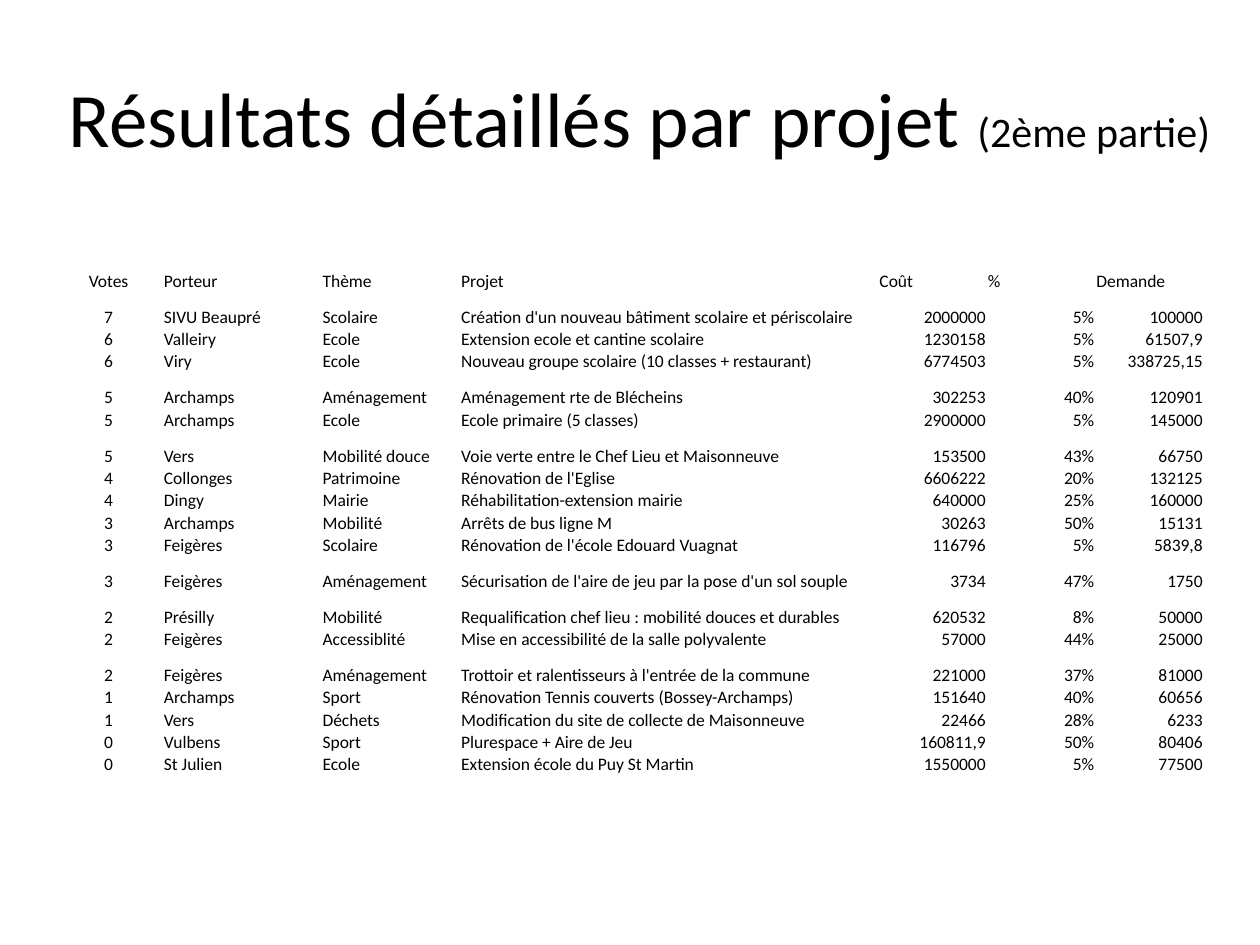
from typing import NamedTuple

from pptx import Presentation
from pptx.dml.color import RGBColor
from pptx.enum.text import MSO_ANCHOR, PP_ALIGN
from pptx.util import Pt

LEFT, MID, RIGHT = PP_ALIGN.LEFT, PP_ALIGN.CENTER, PP_ALIGN.RIGHT
CENTER, BOTTOM = MSO_ANCHOR.MIDDLE, MSO_ANCHOR.BOTTOM
BLACK = RGBColor(0, 0, 0)
FACE = "Calibri"
SHORT, TALL = 12.7, 20.6
INSET = 0.7


class Column(NamedTuple):
    head: str
    width: float
    align: PP_ALIGN


class Project(NamedTuple):
    votes: str
    owner: str
    theme: str
    name: str
    cost: str
    share: str
    asked: str
    high: float = SHORT


COLUMNS = [
    Column("Votes", 62, MID),
    Column("Porteur", 90.7, LEFT),
    Column("Thème", 79.2, LEFT),
    Column("Projet", 239, LEFT),
    Column("Coût", 62, RIGHT),
    Column("%", 62, RIGHT),
    Column("Demande", 62, RIGHT),
]

PROJECTS = [
    Project("7", "SIVU Beaupré", "Scolaire",
            "Création d'un nouveau bâtiment scolaire et périscolaire",
            "2000000", "5%", "100000", TALL),
    Project("6", "Valleiry", "Ecole", "Extension ecole et cantine scolaire",
            "1230158", "5%", "61507,9"),
    Project("6", "Viry", "Ecole", "Nouveau groupe scolaire (10 classes + restaurant)",
            "6774503", "5%", "338725,15"),
    Project("5", "Archamps", "Aménagement", "Aménagement rte de Blécheins",
            "302253", "40%", "120901", TALL),
    Project("5", "Archamps", "Ecole", "Ecole primaire (5 classes)",
            "2900000", "5%", "145000"),
    Project("5", "Vers", "Mobilité douce",
            "Voie verte entre le Chef Lieu et Maisonneuve",
            "153500", "43%", "66750", TALL),
    Project("4", "Collonges", "Patrimoine", "Rénovation de l'Eglise",
            "6606222", "20%", "132125"),
    Project("4", "Dingy", "Mairie", "Réhabilitation-extension mairie",
            "640000", "25%", "160000"),
    Project("3", "Archamps", "Mobilité", "Arrêts de bus ligne M",
            "30263", "50%", "15131"),
    Project("3", "Feigères", "Scolaire", "Rénovation de l'école Edouard Vuagnat",
            "116796", "5%", "5839,8"),
    Project("3", "Feigères", "Aménagement",
            "Sécurisation de l'aire de jeu par la pose d'un sol souple",
            "3734", "47%", "1750", TALL),
    Project("2", "Présilly", "Mobilité",
            "Requalification chef lieu : mobilité douces et durables",
            "620532", "8%", "50000", TALL),
    Project("2", "Feigères", "Accessiblité",
            "Mise en accessibilité de la salle polyvalente",
            "57000", "44%", "25000"),
    Project("2", "Feigères", "Aménagement",
            "Trottoir et ralentisseurs à l'entrée de la commune",
            "221000", "37%", "81000", TALL),
    Project("1", "Archamps", "Sport", "Rénovation Tennis couverts (Bossey-Archamps)",
            "151640", "40%", "60656"),
    Project("1", "Vers", "Déchets",
            "Modification du site de collecte de Maisonneuve",
            "22466", "28%", "6233"),
    Project("0", "Vulbens", "Sport", "Plurespace + Aire de Jeu",
            "160811,9", "50%", "80406"),
    Project("0", "St Julien", "Ecole", "Extension école du Puy St Martin",
            "1550000", "5%", "77500"),
]


def style(font, size: float) -> None:
    font.name = FACE
    font.size = Pt(size)
    font.color.rgb = BLACK


def draw_title(slide) -> None:
    box = slide.shapes.add_textbox(Pt(19.4), Pt(21.6), Pt(692), Pt(90))
    frame = box.text_frame
    frame.word_wrap = True
    frame.vertical_anchor = CENTER
    line = frame.paragraphs[0]
    line.alignment = MID
    for text, size in (("Résultats détaillés par projet ", 44), ("(2ème partie)", 24)):
        run = line.add_run()
        run.text = text
        style(run.font, size)


def fill_cell(cell, text: str, align: PP_ALIGN) -> None:
    cell.fill.background()
    cell.vertical_anchor = BOTTOM
    cell.margin_left = cell.margin_right = cell.margin_top = Pt(INSET)
    cell.margin_bottom = 0
    cell.text = text
    line = cell.text_frame.paragraphs[0]
    line.alignment = align
    style(line.font, 10)


def draw_table(slide) -> None:
    highs = [TALL] + [item.high for item in PROJECTS]
    wide = sum(col.width for col in COLUMNS)
    table = slide.shapes.add_table(
        len(highs), len(COLUMNS), Pt(31), Pt(146.2), Pt(wide), Pt(sum(highs))
    ).table
    table.first_row = table.horz_banding = False
    for row, high in zip(table.rows, highs):
        row.height = Pt(high)
    for x, col in enumerate(COLUMNS):
        table.columns[x].width = Pt(col.width)
        fill_cell(table.cell(0, x), col.head, MID if col.align == MID else LEFT)
        for y, item in enumerate(PROJECTS, 1):
            fill_cell(table.cell(y, x), item[x], col.align)


def main() -> None:
    deck = Presentation()
    deck.slide_width, deck.slide_height = Pt(720), Pt(540)
    slide = deck.slides.add_slide(deck.slide_layouts[6])
    draw_title(slide)
    draw_table(slide)
    deck.save("out.pptx")


if __name__ == "__main__":
    main()
